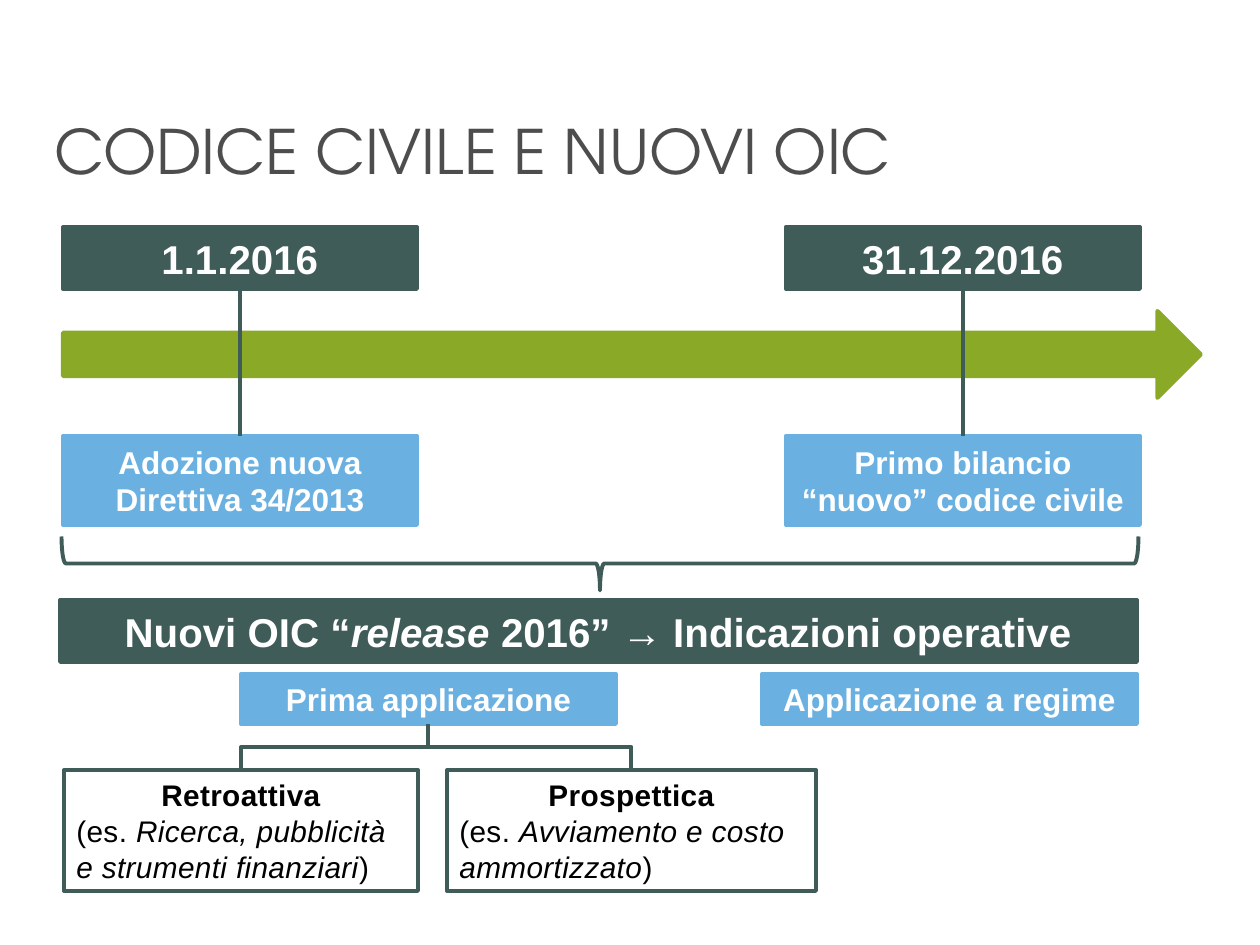
from pptx import Presentation
from pptx.dml.color import RGBColor
from pptx.enum.shapes import MSO_CONNECTOR as LINK, MSO_SHAPE as SHAPE
from pptx.enum.text import PP_ALIGN
from pptx.oxml.ns import qn
from pptx.util import Pt
from lxml.etree import SubElement

PX = 914400 // 126
DARK = RGBColor(0x40, 0x5C, 0x58)
BLUE = RGBColor(0x6A, 0xB1, 0xE2)
GREEN = RGBColor(0x89, 0xA9, 0x27)
GREY = RGBColor(0x4D, 0x4D, 0x4D)
WHITE = RGBColor(0xFF, 0xFF, 0xFF)
BLACK = RGBColor(0, 0, 0)

TITLE = "CODICE CIVILE E NUOVI OIC"
# left, date, event
STEPS = [
    (63, "1.1.2016", "Adozione nuova Direttiva 34/2013"),
    (786, "31.12.2016", "Primo bilancio “nuovo” codice civile"),
]
# (text, style): b bold, i italic
RELEASE = [("Nuovi OIC “", "b"), ("release", "bi"),
           (" 2016” → Indicazioni operative", "b")]
PHASES = [(241, "Prima applicazione"), (762, "Applicazione a regime")]
# left, width, heading, examples
METHODS = [
    (64, 354, "Retroattiva", "Ricerca, pubblicità e strumenti finanziari"),
    (447, 369, "Prospettica", "Avviamento e costo ammortizzato"),
]

deck = Presentation()
deck.slide_width, deck.slide_height = 1260 * PX, 945 * PX
slide = deck.slides.add_slide(deck.slide_layouts[6])
shapes = slide.shapes


def add_runs(para, parts, size, color, space=None):
    for text, style in parts:
        run = para.add_run()
        run.text = text
        font = run.font
        font.name, font.size = "Arial", Pt(size)
        font.bold, font.italic = "b" in style, "i" in style
        font.color.rgb = color
        if space:
            run._r.get_or_add_rPr().set("spc", str(space))


def add_form(kind, box, fill=None, line=DARK):
    form = shapes.add_shape(kind, *(n * PX for n in box))
    form.shadow.inherit = False
    if fill is None:
        form.fill.background()
    else:
        form.fill.solid()
        form.fill.fore_color.rgb = fill
    form.line.color.rgb = line
    form.line.width = Pt(2.25)
    return form


def add_label(box, fill, parts, size):
    form = add_form(SHAPE.RECTANGLE, box, fill, fill)
    para = form.text_frame.paragraphs[0]
    para.alignment = PP_ALIGN.CENTER
    add_runs(para, parts, size, WHITE)
    return form


def add_link(kind, start, end):
    """Join the bottom of start to the top of end."""
    link = shapes.add_connector(kind, 0, 0, 0, 0)
    link.begin_connect(start, 2)
    link.end_connect(end, 0)
    link.line.color.rgb = DARK
    link.line.width = Pt(2.25)
    SubElement(link._element.spPr, qn("a:effectLst"))
    return link


def add_elbow(start, end):
    """Turn the elbow so that it leaves downwards."""
    link = add_link(LINK.ELBOW, start, end)
    x1, y1 = start.left + start.width // 2, start.top + start.height
    x2, y2 = end.left + end.width // 2, end.top
    wide, high = y2 - y1, abs(x2 - x1)
    link.left, link.top = (x1 + x2 - wide) // 2, (y1 + y2 - high) // 2
    link.width, link.height = wide, high
    frame = link._element.spPr.find(qn("a:xfrm"))
    for name in ("flipH", "flipV"):
        frame.attrib.pop(name, None)
    if x2 < x1:
        frame.set("rot", str(90 * 60000))
    else:
        frame.set("rot", str(270 * 60000))
        frame.set("flipH", "1")


title = shapes.add_textbox(*(n * PX for n in (42, 115, 1187, 169)))
title.text_frame.word_wrap = True
title.text_frame.text = TITLE
head = title.text_frame.paragraphs[0]
head.line_spacing = 0.9
font = head.runs[0].font
font.name, font.size = "TeX Gyre Adventor", Pt(35)
font.color.rgb = GREY

pairs = [(add_label((x, 227, 354, 62), DARK, [(date, "b")], 23),
          add_label((x, 436, 354, 89), BLUE, [(event, "b")], 18))
         for x, date, event in STEPS]

brace = add_form(SHAPE.RIGHT_BRACE, (573, 25, 54, 1077))
brace.rotation = 90
brace.adjustments[0], brace.adjustments[1] = 0.08, 0.5

add_label((60, 600, 1077, 62), DARK, RELEASE, 23)
phases = [add_label((x, 674, 375, 50), BLUE, [(name, "b")], 18)
          for x, name in PHASES]

methods = []
for x, wide, name, cases in METHODS:
    form = add_form(SHAPE.RECTANGLE, (x, 770, wide, 121))
    top = form.text_frame.paragraphs[0]
    top.alignment = PP_ALIGN.CENTER
    add_runs(top, [(name, "b")], 17, BLACK, 20)
    body = form.text_frame.add_paragraph()
    body.alignment = PP_ALIGN.LEFT
    add_runs(body, [("(es. ", ""), (cases, "i"), (")", "")], 17, BLACK, 20)
    methods.append(form)

add_form(SHAPE.RIGHT_ARROW, (63, 311, 1138, 87), GREEN, GREEN)
for date, event in pairs:
    add_link(LINK.STRAIGHT, date, event)
for form in methods:
    add_elbow(phases[0], form)

deck.save("out.pptx")
